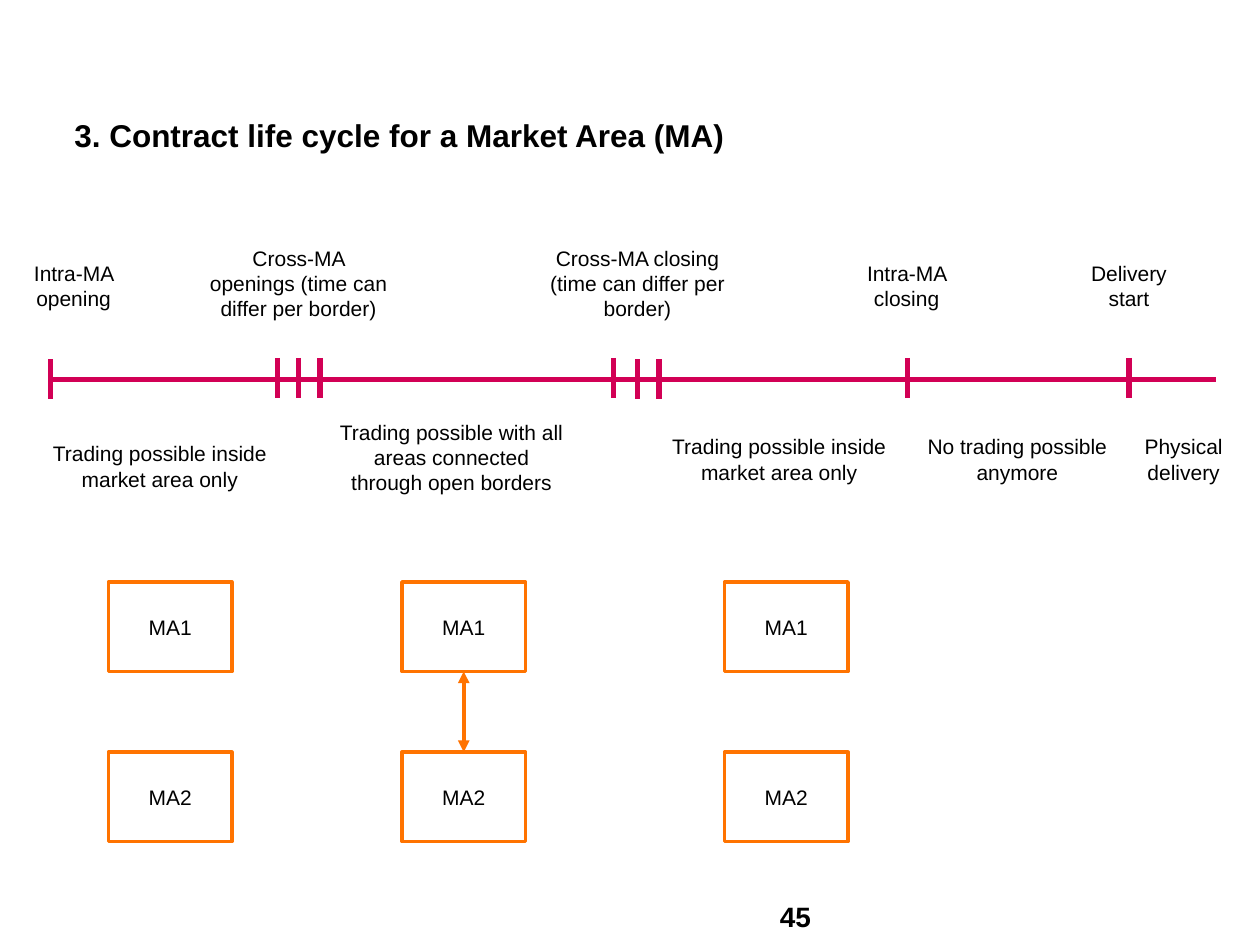
from lxml.etree import SubElement
from pptx import Presentation
from pptx.dml.color import RGBColor
from pptx.enum.shapes import MSO_CONNECTOR as Connector, MSO_SHAPE as Shape
from pptx.enum.text import MSO_ANCHOR as Anchor, PP_ALIGN as Align
from pptx.oxml.ns import qn
from pptx.util import Pt

BLACK = RGBColor(0x00, 0x00, 0x00)
MAGENTA = RGBColor(0xD2, 0x00, 0x55)
ORANGE = RGBColor(0xFF, 0x73, 0x00)

AXIS_Y = 216.7
TICK_HEIGHT = 23
# Centre of each tick and its vertical offset from the axis
TICKS = [(28.8, 0), (158.4, -0.7), (170.6, -0.7), (182.9, -0.7),
         (350.6, -0.7), (364.3, 0), (376.6, 0), (518.4, -0.7), (645.1, -0.7)]

# Paragraphs, left, top, width, height
EVENTS = [
    (["Intra-MA opening"], -3.6, 145.4, 91.4, 36),
    (["Cross-MA openings (time can differ per border)"], 112.3, 136.8, 116.6, 51),
    (["Cross-MA closing", "(time can differ per border)"], 306.7, 136.8, 115.2, 51),
    (["Intra-MA closing"], 484.6, 145.4, 67, 36),
    (["Delivery", "start"], 611.3, 145.4, 67.7, 36),
]
PHASES = [
    (["Trading possible inside market area only"], 12.2, 248.4, 158.4, 36),
    (["Trading possible with all areas connected through open borders"],
     185, 236.2, 146.2, 51),
    (["Trading possible inside market area only"], 372.2, 244.4, 146.2, 36),
    (["No trading possible anymore"], 517.7, 244.4, 127.4, 36),
    (["Physical delivery"], 641.5, 244.4, 69.8, 36),
]

AREA_LEFTS = [61.9, 229.7, 414]
AREA_TOPS = {"MA1": 332.6, "MA2": 429.8}
AREA_WIDTH, AREA_HEIGHT = 70.6, 51.1
LINKED_LEFT = AREA_LEFTS[1]


def write(frame, paragraphs, size=12, bold=False, align=Align.CENTER):
    frame.word_wrap = True
    for index, text in enumerate(paragraphs):
        paragraph = frame.paragraphs[0] if index == 0 else frame.add_paragraph()
        paragraph.alignment = align
        run = paragraph.add_run()
        run.text = text
        run.font.name = "Arial"
        run.font.size = Pt(size)
        run.font.bold = bold
        run.font.color.rgb = BLACK


def clear_margins(frame):
    frame.margin_left = frame.margin_right = 0
    frame.margin_top = frame.margin_bottom = 0


def set_title(slide, text):
    title = slide.shapes.title
    title.left, title.top, title.width, title.height = Pt(42.5), Pt(66.2), Pt(633.6), Pt(46)
    clear_margins(title.text_frame)
    title.text_frame.vertical_anchor = Anchor.TOP
    write(title.text_frame, [text], size=18, bold=True, align=Align.LEFT)


def add_label(slide, paragraphs, left, top, width, height):
    label = slide.shapes.add_textbox(Pt(left), Pt(top), Pt(width), Pt(height))
    write(label.text_frame, paragraphs)


def add_page_number(slide, number):
    box = slide.shapes.add_textbox(Pt(445.7), Pt(514), Pt(44.6), Pt(19.4))
    clear_margins(box.text_frame)
    write(box.text_frame, [number], size=16, bold=True, align=Align.LEFT)


def add_line(slide, x1, y1, x2, y2, color, width):
    line = slide.shapes.add_connector(Connector.STRAIGHT, Pt(x1), Pt(y1), Pt(x2), Pt(y2))
    line.line.color.rgb = color
    line.line.width = Pt(width)
    SubElement(line._element.spPr, qn("a:effectLst"))
    return line


def add_timeline(slide):
    add_line(slide, TICKS[0][0], AXIS_Y, 694.8, AXIS_Y, MAGENTA, 3)
    for x, offset in TICKS:
        middle = AXIS_Y + offset
        add_line(slide, x, middle - TICK_HEIGHT / 2, x, middle + TICK_HEIGHT / 2, MAGENTA, 3)


def add_market_area(slide, name, left, top):
    area = slide.shapes.add_shape(Shape.RECTANGLE, Pt(left), Pt(top),
                                  Pt(AREA_WIDTH), Pt(AREA_HEIGHT))
    area.shadow.inherit = False
    area.fill.background()
    area.line.color.rgb = ORANGE
    area.line.width = Pt(2)
    area.text_frame.vertical_anchor = Anchor.MIDDLE
    write(area.text_frame, [name])


def add_cross_border_arrow(slide):
    x = LINKED_LEFT + AREA_WIDTH / 2
    arrow = add_line(slide, x, AREA_TOPS["MA1"] + AREA_HEIGHT, x, AREA_TOPS["MA2"], ORANGE, 2.25)
    outline = arrow.line._get_or_add_ln()
    for end in ("a:headEnd", "a:tailEnd"):
        SubElement(outline, qn(end), type="triangle")


def main():
    deck = Presentation()
    deck.slide_width, deck.slide_height = Pt(720), Pt(540)
    slide = deck.slides.add_slide(deck.slide_layouts[5])
    set_title(slide, "3. Contract life cycle for a Market Area (MA)")
    add_page_number(slide, "45")
    add_timeline(slide)
    for label in EVENTS + PHASES:
        add_label(slide, *label)
    for left in AREA_LEFTS:
        for name, top in AREA_TOPS.items():
            add_market_area(slide, name, left, top)
    add_cross_border_arrow(slide)
    deck.save("out.pptx")


if __name__ == "__main__":
    main()
